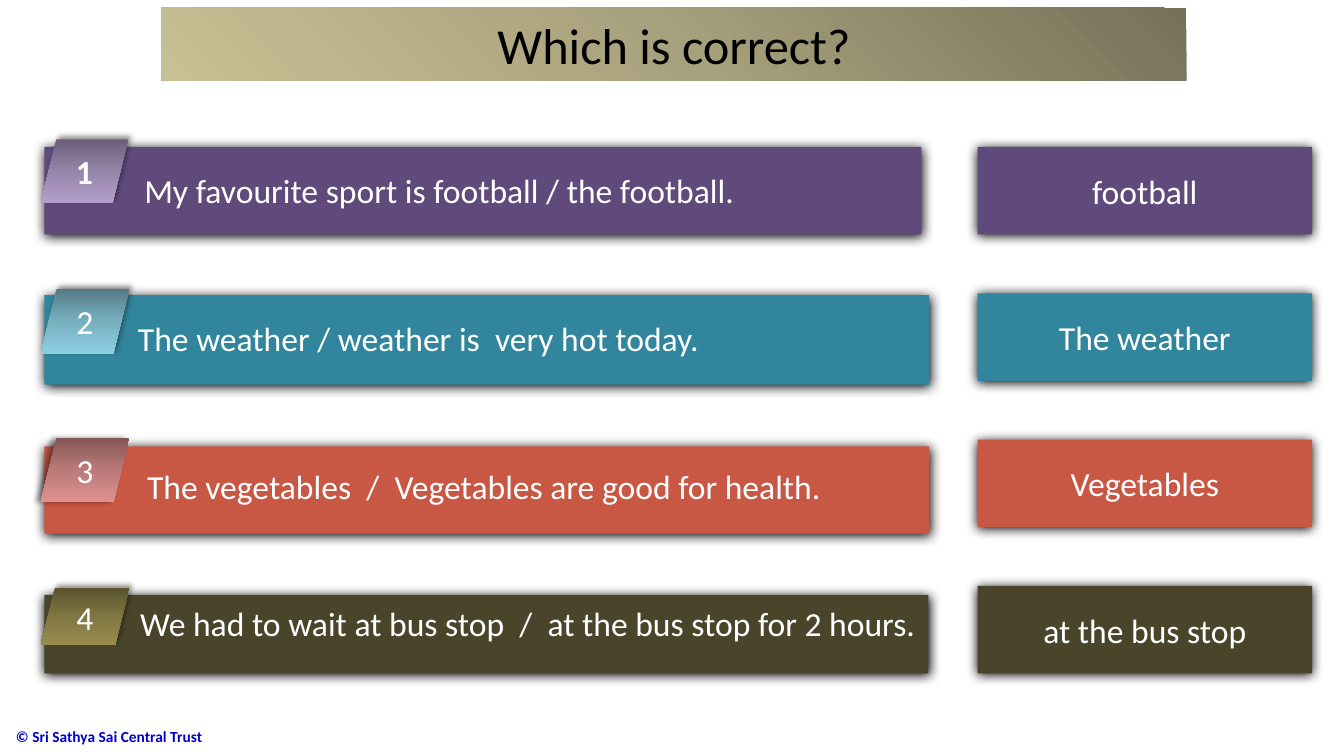
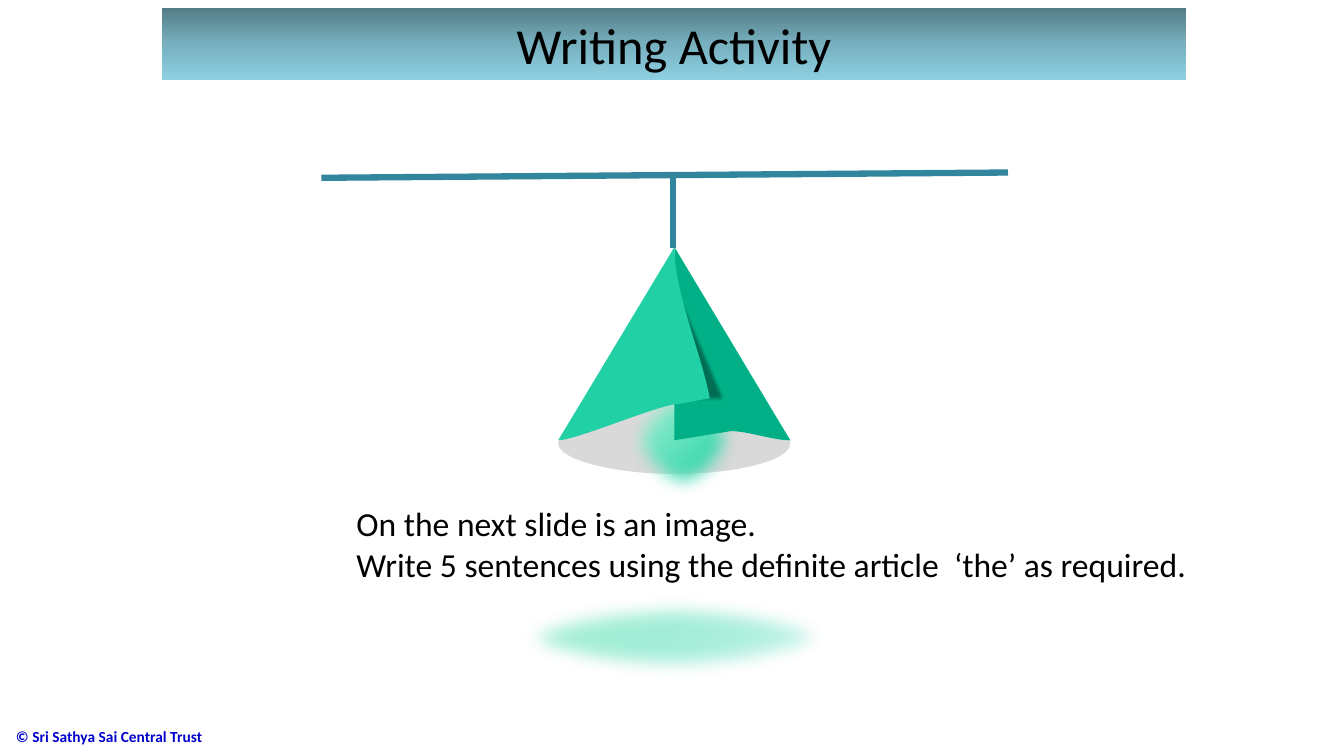
from dataclasses import dataclass

from lxml.etree import SubElement
from pptx import Presentation
from pptx.dml.color import RGBColor
from pptx.enum.shapes import MSO_CONNECTOR, MSO_SHAPE
from pptx.enum.text import MSO_ANCHOR, PP_ALIGN
from pptx.oxml.ns import qn
from pptx.util import Pt


@dataclass(frozen=True)
class Theme:
    font: str = "Calibri"
    title_size: int = 36
    body_size: int = 24
    footer_size: int = 11
    black: str = "000000"
    white: str = "FFFFFF"
    footer: str = "0000CC"
    purple: str = "604A7B"
    teal: str = "31859C"
    red: str = "C85744"
    olive: str = "4A452A"
    grey: str = "D9D9D9"
    cloth_dark: str = "01B086"
    cloth_light: str = "22D0A6"
    sand_fade: tuple = ("767158", "A8A17D", "C8C094")
    purple_fade: tuple = ("6A5E78", "9686AA", "B39FCA")
    teal_fade: tuple = ("547B86", "77B0BF", "8DD0E2")
    red_fade: tuple = ("845655", "BB7A79", "DE918F")
    olive_fade: tuple = ("5A542F", "817743", "998D4F")
    glow: tuple = ("00CC9B", "BAF5DB", "DEF9ED")
    bar_shadow: tuple = (100, 8.5, 1, 90)
    tab_shadow: tuple = (40, 4, 3, 315)
    tab_shadow_left: tuple = (40, 4, 3, 180)


THEME = Theme()


def write(tf, text, size=THEME.body_size, color=THEME.white, bold=False,
          align=PP_ALIGN.LEFT, anchor=MSO_ANCHOR.TOP, wrap=True):
    tf.word_wrap = wrap
    tf.vertical_anchor = anchor
    for i, line in enumerate(text.split("\n")):
        p = tf.paragraphs[0] if i == 0 else tf.add_paragraph()
        p.alignment = align
        r = p.add_run()
        r.text = line
        r.font.name = THEME.font
        r.font.size = Pt(size)
        r.font.bold = bold
        r.font.color.rgb = RGBColor.from_string(color)


def add_color(parent, color, opacity=100):
    clr = SubElement(parent, qn("a:srgbClr"), val=color)
    if opacity < 100:
        SubElement(clr, qn("a:alpha"), val=str(opacity * 1000))


class Deck:
    def __init__(self, theme):
        self.theme = theme
        self.prs = Presentation()
        self.prs.slide_width, self.prs.slide_height = Pt(960), Pt(540)
        self.layout = self.prs.slide_layouts[6]
        self.s = None
        self.shapes = None

    def slide(self, title, colors, angle):
        th = self.theme
        first = self.s is None
        self.s = self.prs.slides.add_slide(self.layout)
        self.shapes = self.s.shapes
        if first:
            self.footer()
        sp = self.shape(MSO_SHAPE.RECTANGLE, (115.5, 5.5, 732, 51.75))
        self.fade(sp, colors, angle=angle)
        self.label(sp, title, size=th.title_size, color=th.black)

    def footer(self):
        th = self.theme
        tb = self.text((4.3, 511.5, 290, 28.5), "© Sri Sathya Sai Central Trust",
                       size=th.footer_size, color=th.footer, bold=True,
                       anchor=MSO_ANCHOR.MIDDLE)
        self.layout.element.cSld.spTree.append(tb.element)

    def open_group(self):
        self.shapes = self.s.shapes.add_group_shape().shapes

    def close_group(self):
        self.shapes = self.s.shapes

    def text(self, box, text, **fmt):
        tb = self.shapes.add_textbox(*map(Pt, box))
        write(tb.text_frame, text, **fmt)
        return tb

    def label(self, sp, text, **fmt):
        write(sp.text_frame, text, align=PP_ALIGN.CENTER, anchor=MSO_ANCHOR.MIDDLE, **fmt)

    def style(self, sp, color):
        sp.fill.solid()
        sp.fill.fore_color.rgb = RGBColor.from_string(color)
        sp.line.fill.background()
        sp.shadow.inherit = False
        return sp

    def shape(self, kind, box, color=THEME.white):
        return self.style(self.shapes.add_shape(kind, *map(Pt, box)), color)

    def outline(self, color, start, *segments):
        fb = self.shapes.build_freeform(*map(Pt, start))
        fb.add_line_segments([(Pt(x), Pt(y)) for seg in segments for x, y in seg], close=True)
        sp = fb.convert_to_shape()
        steps = iter(list(sp.element.spPr.iter(qn("a:lnTo"))))
        for seg in segments:
            nodes = [next(steps) for _ in seg]
            if len(nodes) == 3:
                bezier = SubElement(nodes[0].getparent(), qn("a:cubicBezTo"))
                nodes[0].addprevious(bezier)
                for node in nodes:
                    bezier.append(node[0])
                    node.getparent().remove(node)
        return self.style(sp, color)

    def line(self, start, end, color, width=4.5):
        cx = self.shapes.add_connector(MSO_CONNECTOR.STRAIGHT, *map(Pt, start + end))
        cx.line.color.rgb = RGBColor.from_string(color)
        cx.line.width = Pt(width)
        SubElement(cx.element.spPr, qn("a:effectLst"))

    def fade(self, sp, colors, angle=None, stops=(0, 50, 100), opacity=100):
        spPr = sp.element.spPr
        grad = SubElement(spPr, qn("a:gradFill"), rotWithShape="1")
        gs_list = SubElement(grad, qn("a:gsLst"))
        for i, (pos, color) in enumerate(zip(stops, colors)):
            gs = SubElement(gs_list, qn("a:gs"), pos=str(pos * 1000))
            add_color(gs, color, opacity if i == 0 else 100)
        if angle is None:
            radial = SubElement(grad, qn("a:path"), {"path": "circle"})
            SubElement(radial, qn("a:fillToRect"), l="100000", t="100000")
        else:
            SubElement(grad, qn("a:lin"), ang=str(angle * 60000), scaled="0")
        spPr.replace(spPr.find(qn("a:solidFill")), grad)

    def cast(self, sp, shadow):
        opacity, blur, dist, angle = shadow
        effects = sp.element.spPr.find(qn("a:effectLst"))
        shdw = SubElement(effects, qn("a:outerShdw"), blurRad=str(Pt(blur)),
                          dist=str(Pt(dist)), dir=str(angle * 60000),
                          algn="ctr", rotWithShape="0")
        add_color(shdw, self.theme.black, opacity)

    def soften(self, sp, radius):
        effects = sp.element.spPr.find(qn("a:effectLst"))
        SubElement(effects, qn("a:softEdge"), rad=str(Pt(radius)))

    def bar(self, box, color):
        sp = self.shape(MSO_SHAPE.RECTANGLE, box, color)
        self.cast(sp, self.theme.bar_shadow)
        return sp

    def tab(self, box, number, colors, shadow, bold):
        sp = self.shape(MSO_SHAPE.PARALLELOGRAM, box)
        self.fade(sp, colors, angle=90)
        self.cast(sp, shadow)
        self.label(sp, number, bold=bold)

    def glow(self, box, opacity=100):
        sp = self.shape(MSO_SHAPE.OVAL, box)
        self.fade(sp, self.theme.glow, stops=(0, 95, 100), opacity=opacity)
        self.soften(sp, 12.5)

    def fold(self, box):
        sp = self.shape(MSO_SHAPE.RIGHT_TRIANGLE, box, self.theme.black)
        clr = sp.element.spPr.find(qn("a:solidFill")).find(qn("a:srgbClr"))
        SubElement(clr, qn("a:alpha"), val="38000")
        self.soften(sp, 2.5)


def quiz_slide(deck):
    th = deck.theme
    deck.slide("Which is correct?", th.sand_fade, 135)
    rows = [
        ("My favourite sport is football / the football.", "football",
         th.purple, th.purple_fade, th.tab_shadow,
         (105, 626.5, 62.5), (99.5, 62.75, 45.5), (96, 118)),
        ("The weather / weather is  very hot today.", "The weather",
         th.teal, th.teal_fade, th.tab_shadow,
         (210.75, 632, 64), (206.5, 63.5, 46), (91.5, 223.5)),
        ("The vegetables  /  Vegetables are good for health.", "Vegetables",
         th.red, th.red_fade, th.tab_shadow_left,
         (318.75, 632, 62.5), (313, 63.5, 45.5), (98, 329)),
        ("We had to wait at bus stop  /  at the bus stop for 2 hours.", "at the bus stop",
         th.olive, th.olive_fade, th.tab_shadow,
         (425, 631.5, 56), (420, 63.5, 41), (93, 427)),
    ]
    for i, (question, _, color, fade, shadow, bar, tab, at) in enumerate(rows):
        deck.open_group()
        deck.bar((31.75, *bar), color)
        deck.tab((29, *tab), str(i + 1), fade, shadow, bold=i == 0)
        deck.text((*at, 571, 36), question)
    deck.close_group()
    for i, (_, answer, color, *_) in enumerate(rows):
        sp = deck.bar((698.25, 105 + 104.5 * i, 239, 62.5), color)
        deck.label(sp, answer)


def lamp_slide(deck):
    th = deck.theme
    deck.slide("Writing Activity", th.teal_fade, 90)
    top, left, right = (481.75, 176.5), (398.75, 314.5), (564.5, 314.5)
    deck.line((480.75, 126.75), (480.75, 177), th.teal)
    deck.outline(th.grey, (398.75, 317),
                 ((398.75, 305.5), (433.5, 271.5), (479.5, 271.5)),
                 ((525.5, 271.5), (564.5, 304.5), (564.5, 317)),
                 ((564.5, 328.5), (528, 338.5), (481.5, 338.5)),
                 ((435.5, 338.5), (398.75, 327.5), (398.75, 317)))
    deck.glow((444.25, 270.5, 87, 87))
    deck.open_group()
    deck.outline(th.cloth_dark, (481.75, 314.5), (top,), (right,),
                 ((551.5, 314.5), (535, 308), (522, 308)))
    deck.fold((485.25, 203.75, 35.25, 83))
    deck.outline(th.cloth_light, (507, 284.5),
                 ((500.5, 250.5), (481.75, 210), top), (left,),
                 ((412, 314.5), (472.5, 288), (485.5, 288.5)))
    deck.close_group()
    deck.glow((360.25, 425, 243.75, 60.25), opacity=10)
    deck.text((247.5, 356, 615.5, 65.5),
              "On the next slide is an image.\n"
              "Write 5 sentences using the definite article  ‘the’ as required.",
              color=th.black, wrap=False)
    deck.line((229.5, 127), (720, 123.25), th.teal)


def main():
    deck = Deck(THEME)
    quiz_slide(deck)
    lamp_slide(deck)
    deck.prs.save("out.pptx")


if __name__ == "__main__":
    main()
